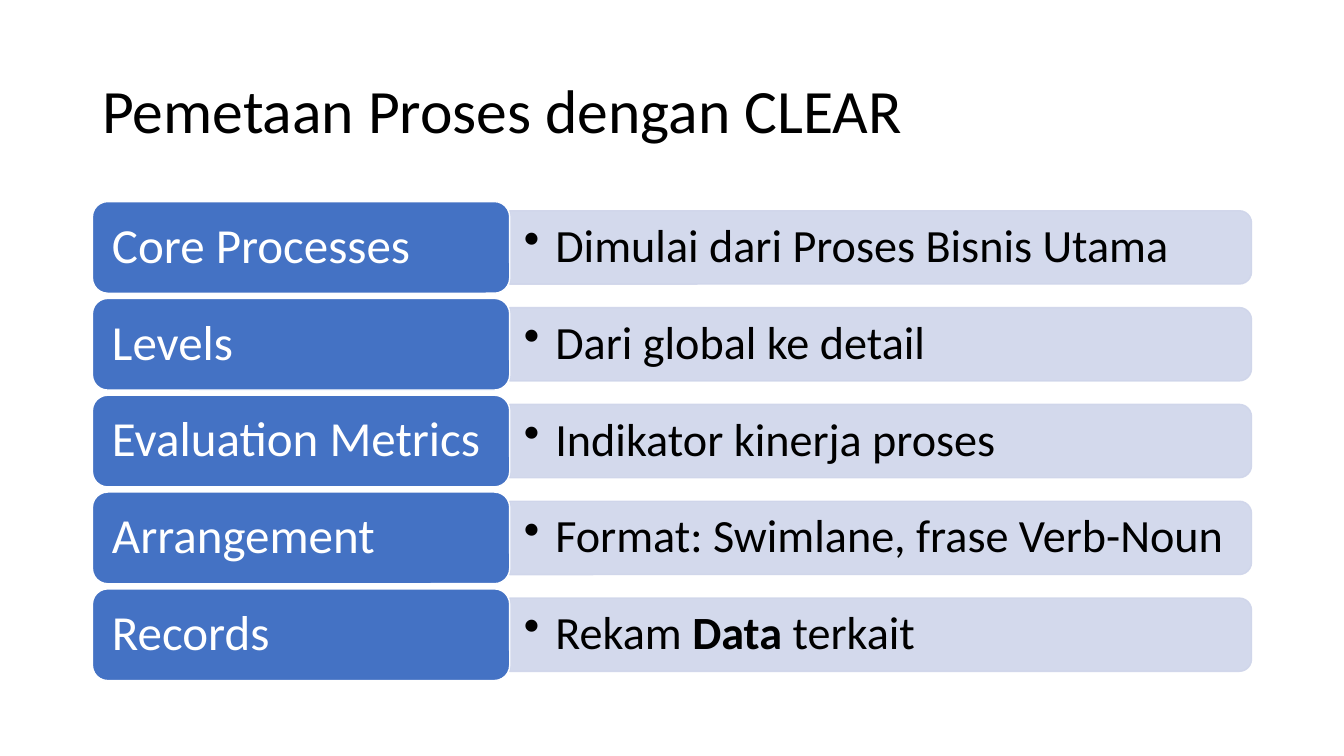
from lxml import etree
from pptx import Presentation
from pptx import util as u
from pptx.dml.color import RGBColor
from pptx.enum import shapes, text
from pptx.oxml.ns import qn

FONT = "Calibri"
BLUE, PALE, WHITE, BLACK = "4472C4", "CFD5EA", "FFFFFF", "000000"
ROWS = [
    ("Core Processes", ["Dimulai dari Proses Bisnis Utama"]),
    ("Levels", ["Dari global ke detail"]),
    ("Evaluation Metrics", ["Indikator kinerja proses"]),
    ("Arrangement", ["Format: Swimlane, frase Verb-Noun"]),
    ("Records", ["Rekam ", "Data ", "terkait"]),
]


def rgb(color):
    return RGBColor.from_string(color)


def paint(sp, fill, line, alpha=None):
    sp.shadow.inherit = False
    sp.fill.solid()
    sp.fill.fore_color.rgb = rgb(fill)
    sp.line.color.rgb = rgb(line)
    sp.line.width = u.Pt(1)
    if alpha:
        for clr in sp._element.spPr.iter(qn("a:srgbClr")):
            etree.SubElement(clr, qn("a:alpha")).set("val", str(alpha * 1000))


def write(sp, parts, size, color, inset_x, inset_y, bullet=False):
    tf = sp.text_frame
    tf.word_wrap = True
    tf.vertical_anchor = text.MSO_ANCHOR.MIDDLE
    tf.margin_left = tf.margin_right = u.Cm(inset_x)
    tf.margin_top = tf.margin_bottom = u.Cm(inset_y)
    p = tf.paragraphs[0]
    p.text = parts[0]
    for part in parts[1:]:
        p.add_run().text = part
    if bullet:
        pPr = p._p.get_or_add_pPr()
        pPr.set("marL", str(u.Cm(0.79)))
        pPr.set("indent", str(u.Cm(-0.79)))
        etree.SubElement(pPr, qn("a:buChar")).set("char", "•")
    p.alignment = text.PP_ALIGN.LEFT
    p.line_spacing = 0.9
    for i, r in enumerate(p.runs):
        r.font.name = FONT
        r.font.size = u.Pt(size)
        r.font.color.rgb = rgb(color)
        r.font.bold = i == 1


def add_title(s, x, y, w, h):
    sp = s.shapes.add_textbox(u.Cm(x), u.Cm(y), u.Cm(w), u.Cm(h))
    write(sp, ["Pemetaan Proses dengan CLEAR"], 44, BLACK, 0.25, 0.13)


def add_row(s, x, y, w, h, label, parts):
    label_w = w * 0.36
    bar_x, bar_w, bar_h = x + label_w, w - label_w, h * 0.8
    sp = s.shapes.add_shape(
        shapes.MSO_SHAPE.ROUND_2_SAME_RECTANGLE,
        u.Cm(bar_x + (bar_w - bar_h) / 2), u.Cm(y + (h - bar_w) / 2),
        u.Cm(bar_h), u.Cm(bar_w))
    sp.rotation = 90
    paint(sp, PALE, PALE, 90)

    sp = s.shapes.add_textbox(
        u.Cm(bar_x), u.Cm(y + (h - bar_h) / 2), u.Cm(bar_w - 0.1), u.Cm(bar_h))
    write(sp, parts, 33, BLACK, 0.36, 0.18, bullet=True)

    sp = s.shapes.add_shape(
        shapes.MSO_SHAPE.ROUNDED_RECTANGLE,
        u.Cm(x), u.Cm(y), u.Cm(label_w), u.Cm(h))
    paint(sp, BLUE, WHITE)
    write(sp, [label], 35, WHITE, 0.38, 0.18)


def add_rows(s, x, y, w, h):
    gap = 0.13
    row_h = (h - gap * (len(ROWS) - 1)) / len(ROWS)
    for i, (label, parts) in enumerate(ROWS):
        add_row(s, x, y + i * (row_h + gap), w, row_h, label, parts)


def main():
    prs = Presentation()
    prs.slide_width, prs.slide_height = u.Cm(33.87), u.Cm(19.05)
    s = prs.slides.add_slide(prs.slide_layouts[6])
    add_title(s, 2.33, 1.01, 29.21, 3.68)
    add_rows(s, 2.33, 5.08, 29.21, 12.07)
    prs.save("out.pptx")


if __name__ == "__main__":
    main()
